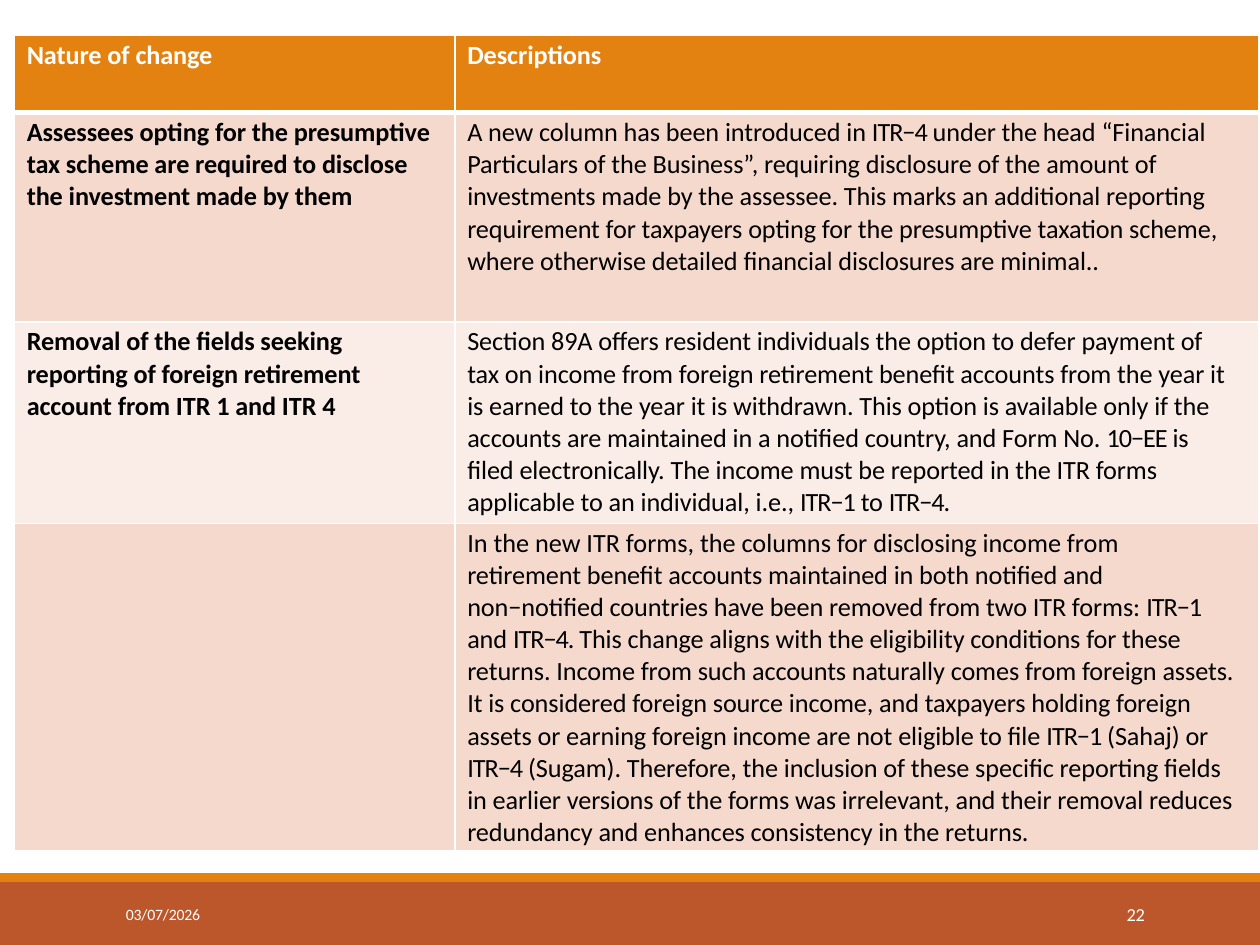
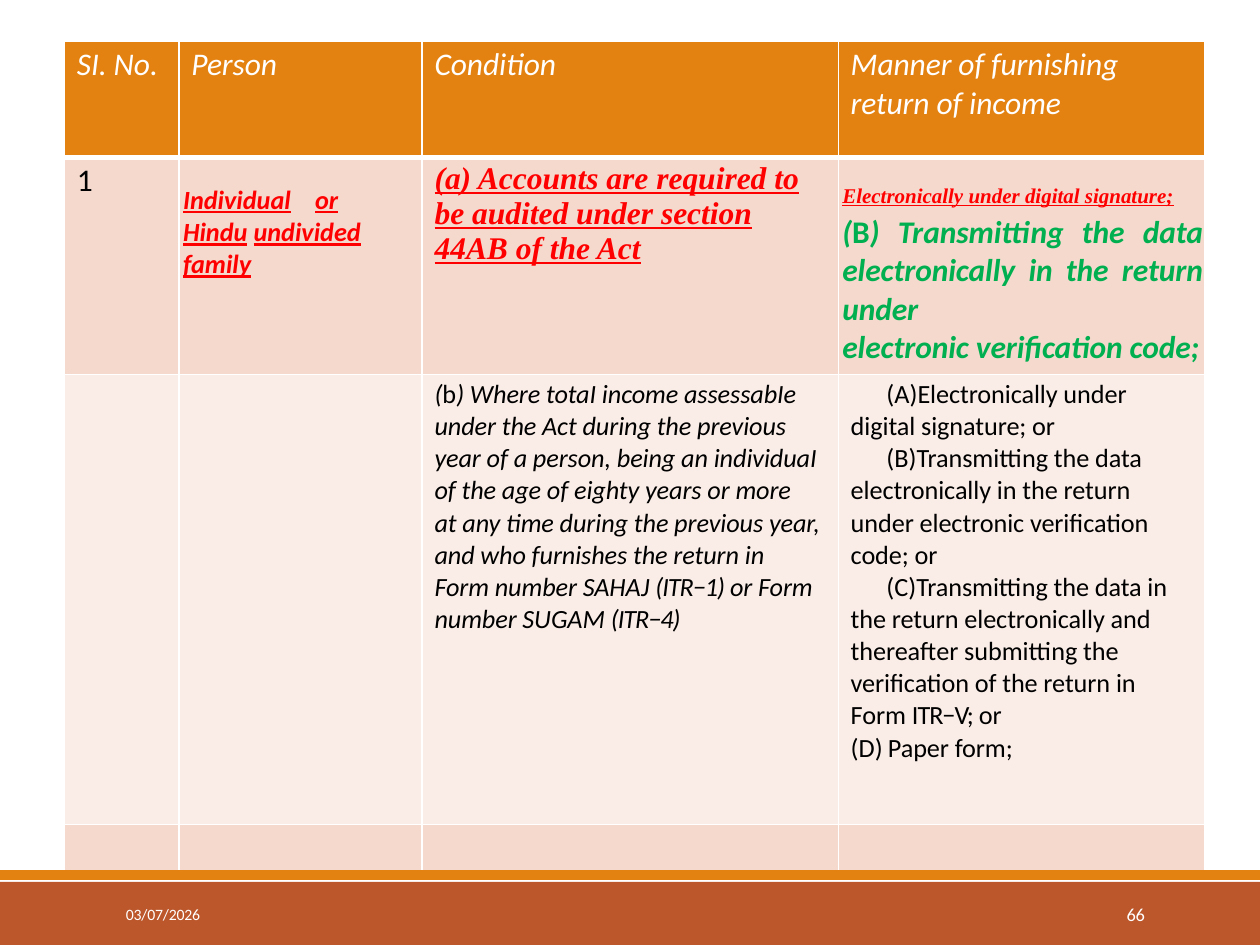
import itertools
from dataclasses import dataclass, field
from typing import Any, NamedTuple, Optional

import pptx
import pptx.dml.color
import pptx.enum.shapes
import pptx.enum.text
import pptx.oxml
import pptx.oxml.ns
import pptx.util
from lxml import etree

Cm = pptx.util.Cm
Pt = pptx.util.Pt


@dataclass(frozen=True)
class Theme:
    orange: str = "E48211"
    rust: str = "BC572C"
    dark_row: str = "F5D9CC"
    light_row: str = "FAEDE7"
    white: str = "FFFFFF"
    black: str = "000000"
    red: str = "FF0000"
    green: str = "00AF50"
    sans: str = "Calibri"
    serif: str = "Times New Roman"
    heading: float = 18
    body: float = 15
    small: float = 12
    number: float = 10.5
    date: float = 9
    tracking: int = -5
    code_tracking: int = -60


THEME = Theme()


class Style(NamedTuple):
    size: float = THEME.body
    color: str = THEME.black
    bold: bool = False
    italic: bool = False
    underline: bool = False
    font: str = THEME.sans
    tracking: int = THEME.tracking


class Run(NamedTuple):
    text: str
    style: Style = Style()


class Paragraph(NamedTuple):
    runs: list[Run]
    first_indent: Optional[float] = None  # cm; set for numbered items only
    hanging: float = 0
    tab: Optional[float] = None
    justified: bool = False
    before: float = 0


@dataclass(frozen=True)
class CellText:
    paragraphs: list[Paragraph] = field(default_factory=list)
    left: float = 0.25
    top: float = 0.08
    right: float = 0


class TableSpec(NamedTuple):
    left: float
    top: float
    columns: list[float]
    rows: list[float]
    bottom_color: str = THEME.white
    bottom_width: float = 1
    side_margins: bool = False


class FooterText(NamedTuple):
    left: float
    top: float
    width: float
    height: float
    size: float
    leading: float


DATE = FooterText(2.54, 18.29, 1.8, 0.38, THEME.date, 9.6)
NUMBER = FooterText(22.71, 18.26, 0.6, 0.43, THEME.number, 11.1)

HEAD = Style(color=THEME.white, bold=True)
LABEL = Style(bold=True)
LOOSE = Style(tracking=0)
COLUMN_HEAD = Style(THEME.heading, THEME.white, italic=True)
RED_SANS = Style(color=THEME.red, bold=True, italic=True, underline=True, tracking=0)
RED_SERIF = RED_SANS._replace(font=THEME.serif, size=THEME.heading)
GREEN = Style(THEME.heading, THEME.green, bold=True, italic=True)
ITALIC = Style(italic=True)


def rgb(color: str) -> pptx.dml.color.RGBColor:
    return pptx.dml.color.RGBColor.from_string(color)


def plain(text: str, style: Style = Style(), right: float = 0) -> CellText:
    return CellText([Paragraph([Run(text, style)])], right=right)


def add_run(paragraph: Any, text: str, style: Style, tracking: int) -> None:
    run = paragraph.add_run()
    run.text = text
    font = run.font
    font.name, font.size = style.font, Pt(style.size)
    font.bold, font.italic, font.underline = style.bold, style.italic, style.underline
    font.color.rgb = rgb(style.color)
    font._element.set("spc", str(tracking))


def is_form_code(word: str) -> bool:
    return "−" in word and word == word.upper()


def write_run(paragraph: Any, run: Run) -> None:
    """Set form codes such as ITR−1 tighter than the words around them."""
    if run.text == "\n":
        paragraph.add_line_break()
        return
    words = run.text.split(" ")
    words = [word + " " for word in words[:-1]] + words[-1:]
    for is_code, group in itertools.groupby(words, is_form_code):
        text = "".join(group)
        if text:
            add_run(paragraph, text, run.style,
                    THEME.code_tracking if is_code else run.style.tracking)


def write_paragraph(paragraph: Any, content: Paragraph) -> None:
    properties = paragraph._p.get_or_add_pPr()
    if content.first_indent is not None:
        properties.set("marL", str(Cm(content.hanging)))
        properties.set("indent", str(Cm(content.first_indent)))
        etree.SubElement(properties, pptx.oxml.ns.qn("a:buAutoNum"), type="alphaUcParenBoth")
    if content.tab is not None:
        stops = etree.SubElement(properties, pptx.oxml.ns.qn("a:tabLst"))
        etree.SubElement(stops, pptx.oxml.ns.qn("a:tab"), pos=str(Cm(content.tab)), algn="l")
    if content.justified:
        paragraph.alignment = pptx.enum.text.PP_ALIGN.JUSTIFY
    if content.before:
        paragraph.space_before = Pt(content.before)
    for run in content.runs:
        write_run(paragraph, run)


def write_cell(cell: Any, content: CellText) -> None:
    cell.margin_left, cell.margin_top = Cm(content.left), Cm(content.top)
    cell.margin_right, cell.margin_bottom = Cm(content.right), 0
    frame = cell.text_frame
    for index, item in enumerate(content.paragraphs):
        write_paragraph(frame.add_paragraph() if index else frame.paragraphs[0], item)


def set_border(cell: Any, side: str, color: str, width: float) -> None:
    properties = cell._tc.get_or_add_tcPr()
    line = etree.SubElement(properties, pptx.oxml.ns.qn(f"a:ln{side}"), w=str(Pt(width)))
    fill = etree.SubElement(line, pptx.oxml.ns.qn("a:solidFill"))
    etree.SubElement(fill, pptx.oxml.ns.qn("a:srgbClr"), val=color)


def row_color(row: int) -> str:
    if row == 0:
        return THEME.orange
    return THEME.dark_row if row % 2 else THEME.light_row


def add_table(slide: Any, spec: TableSpec, contents: list[list[CellText]]) -> None:
    """Draw a banded table; side margins are unfilled columns merged to full height."""
    frame = slide.shapes.add_table(
        len(spec.rows), len(spec.columns), Cm(spec.left), Cm(spec.top),
        Cm(sum(spec.columns)), Cm(sum(spec.rows)))
    table = frame.table
    table.horz_banding = False
    for column, width in zip(table.columns, spec.columns):
        column.width = Cm(width)
    for row, height in zip(table.rows, spec.rows):
        row.height = Cm(height)
    last_row, last_column = len(spec.rows) - 1, len(spec.columns) - 1
    margins = (0, last_column) if spec.side_margins else ()
    for column in margins:
        table.cell(0, column).merge(table.cell(last_row, column))
    for row, column in itertools.product(range(last_row + 1), range(last_column + 1)):
        cell = table.cell(row, column)
        is_margin = column in margins
        set_border(cell, "L", THEME.white, 1)
        set_border(cell, "R", THEME.white, 1)
        set_border(cell, "T", THEME.white, 3 if row == 1 else 1)
        if is_margin or row == last_row:
            set_border(cell, "B", spec.bottom_color, spec.bottom_width)
        else:
            set_border(cell, "B", THEME.white, 3 if row == 0 else 1)
        if is_margin:
            cell.fill.background()
            continue
        cell.fill.solid()
        cell.fill.fore_color.rgb = rgb(row_color(row))
        write_cell(cell, contents[row][column - bool(margins)])


def add_band(slide: Any, top: float, height: float, color: str) -> None:
    band = slide.shapes.add_shape(
        pptx.enum.shapes.MSO_SHAPE.RECTANGLE, 0, Cm(top), Cm(25.4), Cm(height))
    band.shadow.inherit = False
    band.fill.solid()
    band.fill.fore_color.rgb = rgb(color)
    band.line.fill.background()


def add_footer_text(slide: Any, place: FooterText, text: str) -> None:
    box = slide.shapes.add_textbox(
        Cm(place.left), Cm(place.top), Cm(place.width), Cm(place.height))
    frame = box.text_frame
    frame.margin_left = frame.margin_right = frame.margin_top = frame.margin_bottom = 0
    frame.word_wrap = True
    paragraph = frame.paragraphs[0]
    paragraph.line_spacing = Pt(place.leading)
    write_run(paragraph, Run(text, Style(place.size, THEME.white, tracking=-10)))


def add_slide(presentation: Any, number: str) -> Any:
    slide = presentation.slides.add_slide(presentation.slide_layouts[6])
    add_band(slide, 17.78, 1.27, THEME.rust)
    add_footer_text(slide, DATE, "03/07/2026")
    add_footer_text(slide, NUMBER, number)
    return slide


def add_changes_slide(presentation: Any) -> None:
    slide = add_slide(presentation, "22")
    add_band(slide, 17.6, 0.18, THEME.orange)
    spec = TableSpec(0.29, 0.72, [8.88, 16.21], [1.55, 4.22, 4.06, 6.6])
    removal = CellText([Paragraph([
        Run("In the new ITR forms, the columns for disclosing income from ", LOOSE),
        Run("retirement benefit accounts maintained in both notified and non−notified "
            "countries have been removed from two ITR forms: ITR−1 and ITR−4. This change "
            "aligns with the eligibility conditions for these returns. Income from such "
            "accounts naturally comes from foreign assets. It is considered foreign "
            "source income, and taxpayers holding foreign assets or earning foreign "
            "income are not eligible to file ITR−1 (Sahaj) or ITR−4 (Sugam). Therefore, "
            "the inclusion of these specific reporting fields in earlier versions of "
            "the forms was irrelevant, and their removal reduces redundancy and "
            "enhances consistency in the returns.")])], right=0.48)
    add_table(slide, spec, [
        [plain("Nature of change", HEAD), plain("Descriptions", HEAD)],
        [plain("Assessees opting for the presumptive tax scheme are required to disclose "
               "the investment made by them", LABEL, right=0.3),
         plain("A new column has been introduced in ITR−4 under the head “Financial "
               "Particulars of the Business”, requiring disclosure of the amount of "
               "investments made by the assessee. This marks an additional reporting "
               "requirement for taxpayers opting for the presumptive taxation scheme, "
               "where otherwise detailed financial disclosures are minimal..")],
        [plain("Removal of the fields seeking reporting of foreign retirement account "
               "from ITR 1 and ITR 4", LABEL, right=1),
         plain("Section 89A offers resident individuals the option to defer payment of "
               "tax on income from foreign retirement benefit accounts from the year it "
               "is earned to the year it is withdrawn. This option is available only if "
               "the accounts are maintained in a notified country, and Form No. 10−EE is "
               "filed electronically. The income must be reported in the ITR forms "
               "applicable to an individual, i.e., ITR−1 to ITR−4.", right=0.5)],
        [CellText(), removal],
    ])


def add_manner_slide(presentation: Any) -> None:
    slide = add_slide(presentation, "66")
    spec = TableSpec(0, 0.84, [1.3, 2.31, 4.9, 8.39, 7.39, 1.11], [2.34, 4.37, 9.07, 0.94],
                     THEME.orange, 6, side_margins=True)
    person = CellText([Paragraph([
        Run("Individual", RED_SANS), Run("\t", RED_SANS._replace(underline=False)),
        Run("or", RED_SANS), Run("\n"), Run("Hindu", RED_SANS),
        Run(" ", RED_SANS._replace(underline=False)),
        Run("undivided family", RED_SANS)], tab=2.66)], left=0.08, top=0.54)
    audited_manner = CellText([
        Paragraph([Run("Electronically under digital signature;",
                       RED_SERIF._replace(size=THEME.small))]),
        Paragraph([Run("(", GREEN), Run("B", GREEN._replace(italic=False)),
                   Run(") Transmitting the data electronically in the return under", GREEN),
                   Run("\n"), Run("electronic verification code;", GREEN)],
                  justified=True, before=3.2)], left=0.08, top=0.54, right=0.04)
    senior_condition = CellText([Paragraph([
        Run("(", ITALIC), Run("b"),
        Run(") Where totaI income assessabIe under the Act during the previous year of a "
            "person, being an individuaI of the age of eighty years or more", ITALIC),
        Run("\n"),
        Run("at any time during the previous year, and who furnishes the return in Form "
            "number SAHAJ (ITR−1) or Form number SUGAM (ITR−4)", ITALIC)])], right=0.33)
    wrapped_items = [
        "Electronically under digital signature; or",
        "Transmitting the data electronically in the return under electronic "
        "verification code; or",
        "Transmitting the data in the return electronically and thereafter submitting "
        "the verification of the return in Form ITR−V; or",
    ]
    senior_manner = CellText(
        [Paragraph([Run(item)], first_indent=0.72, tab=0.73) for item in wrapped_items]
        + [Paragraph([Run("Paper form;")], first_indent=-0.75, hanging=0.75, tab=0.75)],
        right=0.5)
    heads = ["SI. No.", "Person", "Condition", "Manner of furnishing return of income"]
    add_table(slide, spec, [
        [plain(head, COLUMN_HEAD, right=0.3) for head in heads],
        [plain("1", Style(THEME.heading)), person,
         plain("(a) Accounts are required to be audited under section 44AB of the Act",
               RED_SERIF, right=0.5), audited_manner],
        [CellText(), CellText(), senior_condition, senior_manner],
        [CellText()] * 4,
    ])


def main() -> None:
    presentation = pptx.Presentation()
    presentation.slide_width, presentation.slide_height = Cm(25.4), Cm(19.05)
    add_changes_slide(presentation)
    add_manner_slide(presentation)
    presentation.save("out.pptx")


if __name__ == "__main__":
    main()
